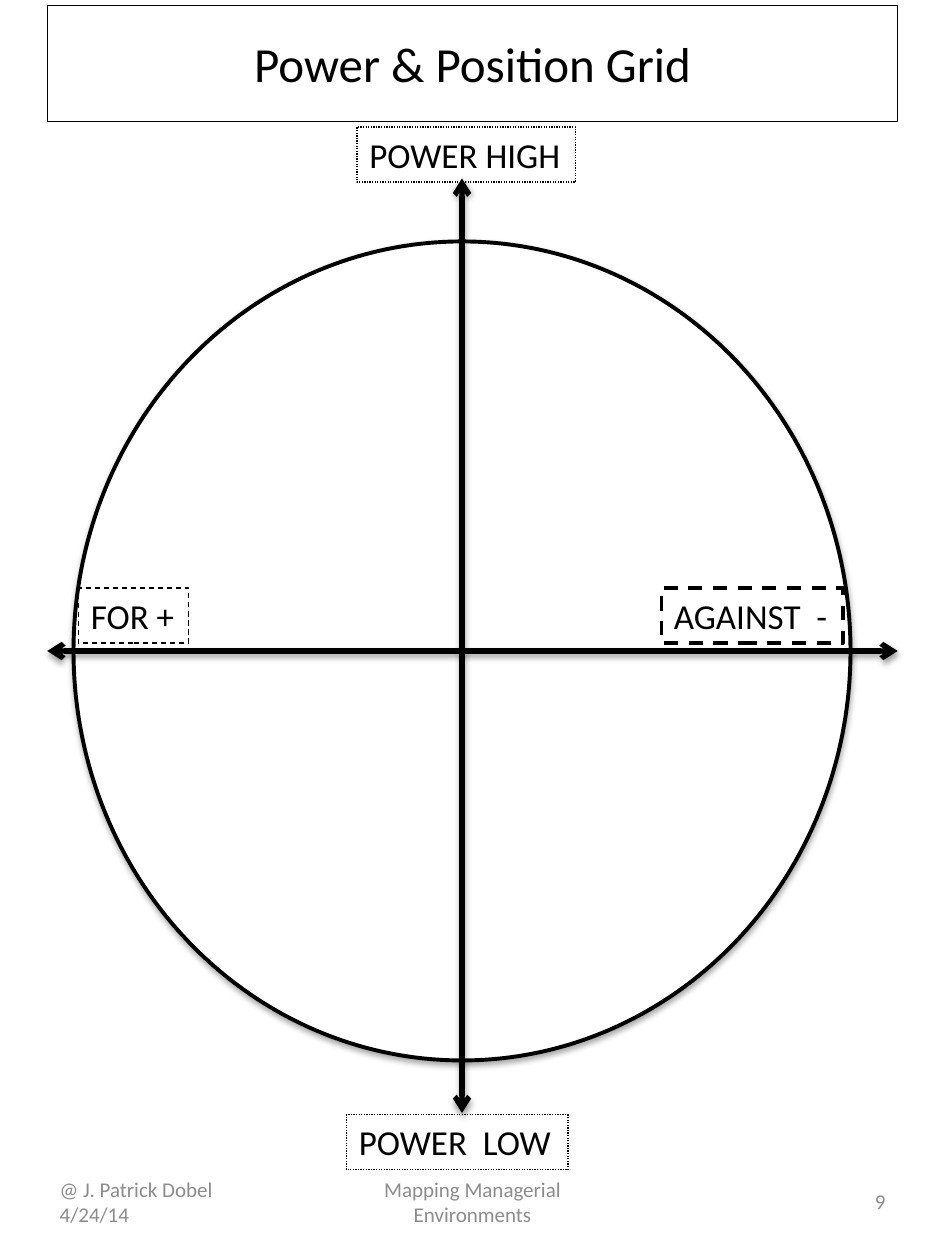
from pptx import Presentation
from pptx.dml.color import RGBColor
from pptx.enum.dml import MSO_LINE
from pptx.enum.shapes import MSO_CONNECTOR, MSO_SHAPE
from pptx.enum.text import MSO_ANCHOR, MSO_AUTO_SIZE, PP_ALIGN
from pptx.oxml import parse_xml
from pptx.oxml.ns import nsdecls, qn
from pptx.util import Pt

BLACK = RGBColor(0x00, 0x00, 0x00)
WHITE = RGBColor(0xFF, 0xFF, 0xFF)
GRAY = RGBColor(0x8C, 0x8C, 0x8C)


class GridSlide:
    """Holds the text style and the current slide, and adds its elements."""

    font = "Calibri"

    def __init__(self, page):
        self.page = page

    def set_text(self, shape, text, size, color, align, **frame_format):
        frame = shape.text_frame
        for name, value in frame_format.items():
            setattr(frame, name, value)
        para = frame.paragraphs[0]
        para.alignment = align
        span = para.add_run()
        span.text = text
        span.font.color.rgb = color
        for name, value in {"name": self.font, "size": Pt(size)}.items():
            setattr(span.font, name, value)

    def outline(self, shape, width, dash=None):
        shape.line.color.rgb = BLACK
        shape.line.width = Pt(width)
        if dash is not None:
            shape.line.dash_style = dash

    def cast_shadow(self, shape, opacity, distance):
        properties = shape._element.spPr
        properties.append(parse_xml(
            f'<a:effectLst {nsdecls("a")}>'
            f'<a:outerShdw blurRad="{Pt(3.1)}" dist="{Pt(distance)}" dir="5400000" rotWithShape="0">'
            f'<a:srgbClr val="{BLACK}"><a:alpha val="{opacity * 1000}"/></a:srgbClr>'
            '</a:outerShdw></a:effectLst>'))

    def title(self, text, bounds):
        box = self.page.shapes.title
        box.left, box.top, box.width, box.height = map(Pt, bounds)
        self.outline(box, 0.75)
        self.set_text(box, text, 28, BLACK, PP_ALIGN.CENTER,
                      vertical_anchor=MSO_ANCHOR.MIDDLE, auto_size=MSO_AUTO_SIZE.NONE)

    def circle(self, bounds):
        shape = self.page.shapes.add_shape(MSO_SHAPE.OVAL, *map(Pt, bounds))
        shape.fill.solid()
        shape.fill.fore_color.rgb = WHITE
        self.outline(shape, 2.25)
        self.cast_shadow(shape, 35, 1.8)

    def axis(self, ends):
        line = self.page.shapes.add_connector(MSO_CONNECTOR.STRAIGHT, *map(Pt, ends))
        self.outline(line, 3)
        stroke = line._element.spPr.find(qn("a:ln"))
        for end in ("headEnd", "tailEnd"):
            stroke.append(parse_xml(f'<a:{end} {nsdecls("a")} type="arrow"/>'))
        self.cast_shadow(line, 38, 1.6)

    def label(self, text, bounds, width, dash):
        box = self.page.shapes.add_textbox(*map(Pt, bounds))
        self.outline(box, width, dash)
        self.set_text(box, text, 20, BLACK, PP_ALIGN.LEFT,
                      word_wrap=False, auto_size=MSO_AUTO_SIZE.SHAPE_TO_FIT_TEXT)

    def footer(self, text, left, width, align):
        box = self.page.shapes.add_textbox(*map(Pt, (left, 667.4, width, 38.2)))
        self.set_text(box, text, 12, GRAY, align,
                      word_wrap=True, vertical_anchor=MSO_ANCHOR.MIDDLE)


def main():
    deck = Presentation()
    deck.slide_width, deck.slide_height = Pt(540), Pt(720)
    grid = GridSlide(deck.slides.add_slide(deck.slide_layouts[5]))
    grid.title("Power & Position Grid", (27, 3, 486, 66.4))
    grid.circle((42, 138, 444, 468))
    for ends in ((264, 102, 264, 636), (27, 372, 513, 372)):
        grid.axis(ends)
    for text, left, top, width, stroke, dash in (
        ("POWER HIGH", 204, 72.6, 124.8, 0.75, MSO_LINE.ROUND_DOT),
        ("POWER  LOW", 198, 637, 126.6, 0.75, MSO_LINE.ROUND_DOT),
        ("FOR +", 44.8, 336, 63, 0.75, MSO_LINE.DASH),
        ("AGAINST  -", 378, 336, 103.7, 2, MSO_LINE.DASH),
    ):
        grid.label(text, (left, top, width, 31.5), stroke, dash)
    for text, left, width, align in (
        ("@ J. Patrick Dobel  4/24/14", 27, 126, PP_ALIGN.LEFT),
        ("Mapping Managerial Environments", 184.5, 171, PP_ALIGN.CENTER),
        ("9", 387, 126, PP_ALIGN.RIGHT),
    ):
        grid.footer(text, left, width, align)
    deck.save("out.pptx")


if __name__ == "__main__":
    main()
